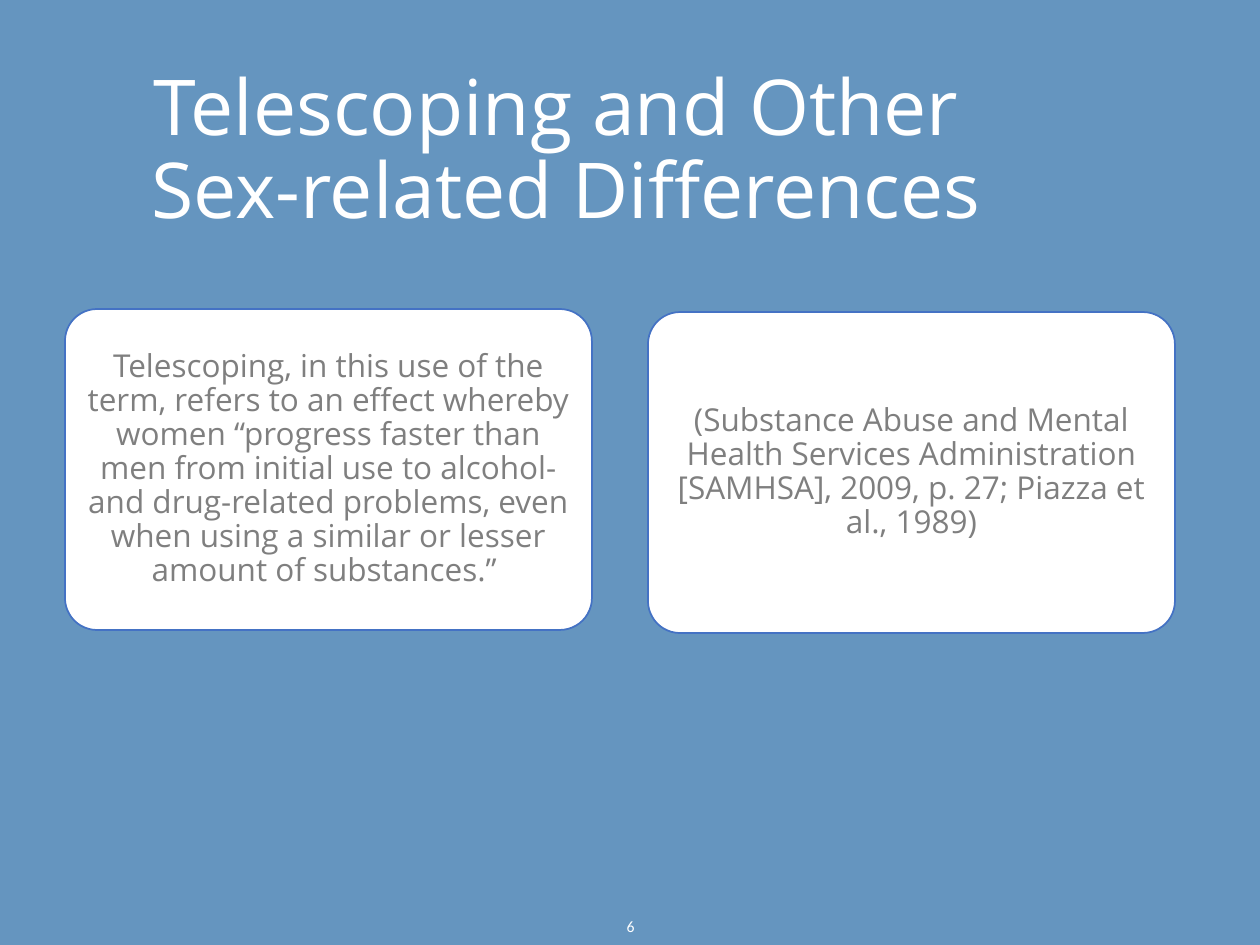
from pptx import Presentation
from pptx.dml.color import RGBColor
from pptx.enum.shapes import MSO_SHAPE
from pptx.enum.text import MSO_ANCHOR, MSO_AUTO_SIZE, PP_ALIGN
from pptx.util import Pt

PX_PER_INCH = 126
CARD_W, CARD_H = 527, 321


def px(n):
    return round(n * 914400 / PX_PER_INCH)


def color(hex_code):
    return RGBColor.from_string(hex_code)


def format_text(tf, text, size, font, hex_code, anchor, spacing=None):
    tf.word_wrap = True
    tf.auto_size = MSO_AUTO_SIZE.NONE
    tf.vertical_anchor = anchor
    tf.text = text
    p = tf.paragraphs[0]
    p.alignment = PP_ALIGN.CENTER
    p.line_spacing = spacing
    p.font.size = Pt(size)
    p.font.name = font
    p.font.color.rgb = color(hex_code)


def add_title(s, x, y, w, h):
    sp = s.shapes.title
    sp.left, sp.top, sp.width, sp.height = px(x), px(y), px(w), px(h)
    format_text(sp.text_frame, "Telescoping and Other \vSex-related Differences",
                44, "Open Sans", "FFFFFF", MSO_ANCHOR.TOP, 0.9)


def add_card(s, x, y, w, h, text, inset):
    sp = s.shapes.add_shape(MSO_SHAPE.ROUNDED_RECTANGLE, px(x), px(y), px(w), px(h))
    sp.adjustments[0] = 0.1
    sp.shadow.inherit = False
    sp.fill.solid()
    sp.fill.fore_color.rgb = color("FFFFFF")
    sp.line.color.rgb = color("4472C4")
    sp.line.width = Pt(1)
    tf = sp.text_frame
    tf.margin_left = tf.margin_right = px(inset)
    tf.margin_top = tf.margin_bottom = px(inset)
    format_text(tf, text, 18, "Open Sans", "7F7F7F", MSO_ANCHOR.MIDDLE, 0.9)


def add_page_number(s, x, y, w, h):
    sp = s.shapes.add_textbox(px(x), px(y), px(w), px(h))
    format_text(sp.text_frame, "6", 9, "Calibri", "FFFFFF", MSO_ANCHOR.MIDDLE)


def main():
    prs = Presentation()
    prs.slide_width, prs.slide_height = px(1260), px(945)
    s = prs.slides.add_slide(prs.slide_layouts[5])
    s.background.fill.solid()
    s.background.fill.fore_color.rgb = color("6595BF")

    add_page_number(s, 489, 901, 283, 50)
    add_title(s, 31, 63, 1071, 158)

    # Definition and its sources
    add_card(s, 65, 309, CARD_W, CARD_H,
             "Telescoping, in this use of the term, refers to an effect whereby "
             "women “progress faster than men from initial use to alcohol- and "
             "drug-related problems, even when using a similar or lesser amount "
             "of substances.” ", 9)
    add_card(s, 648, 312, CARD_W, CARD_H,
             "(Substance Abuse and Mental Health Services Administration "
             "[SAMHSA], 2009, p. 27; Piazza et al., 1989)", 17)

    prs.save("out.pptx")


if __name__ == "__main__":
    main()
